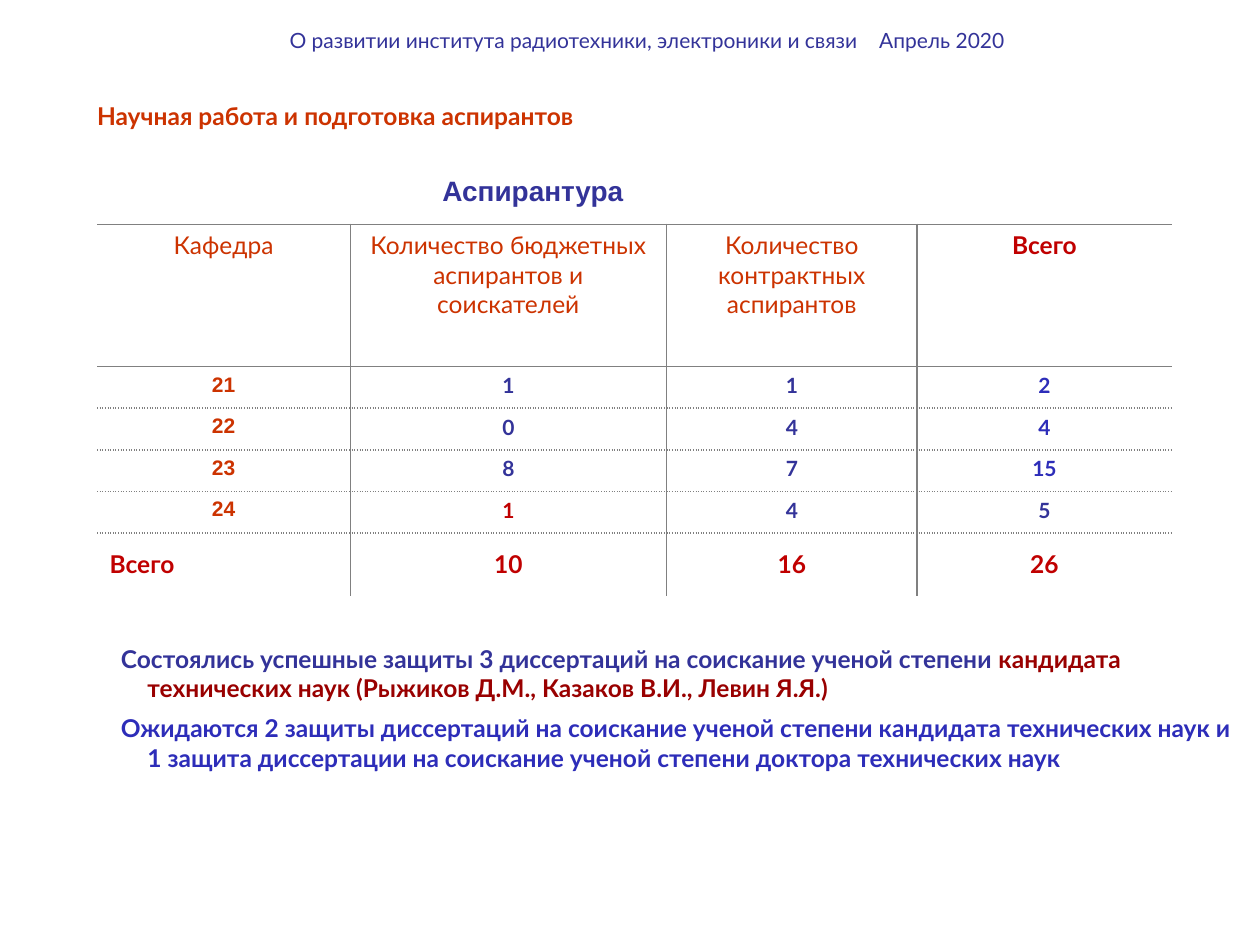
"""Build the slide on postgraduate training."""
from typing import NamedTuple

from lxml import etree
from pptx import Presentation, util as u
from pptx.dml import color
from pptx.enum import text as t
from pptx.oxml import ns

ORANGE = color.RGBColor(0xCC, 0x33, 0x00)
NAVY = color.RGBColor(0x33, 0x33, 0x99)
BLUE = color.RGBColor(0x2D, 0x2D, 0xB9)
RED = color.RGBColor(0xC0, 0x00, 0x00)
MAROON = color.RGBColor(0x99, 0x00, 0x00)
GREY = color.RGBColor(0x80, 0x80, 0x80)


class Run(NamedTuple):
    text: str
    ink: color.RGBColor
    size: int = 14
    bold: bool = True
    font: str = "Lato"


def write(par, *runs: Run) -> None:
    for item in runs:
        run = par.add_run()
        run.text = item.text
        run.font.size = u.Pt(item.size)
        run.font.bold = item.bold
        run.font.name = item.font
        run.font.color.rgb = item.ink


def place(shape, left: float, top: float, width: float, height: float, pad: float = 0.05):
    shape.left, shape.top = u.Inches(left), u.Inches(top)
    shape.width, shape.height = u.Inches(width), u.Inches(height)
    frame = shape.text_frame
    frame.word_wrap = True
    frame.auto_size = t.MSO_AUTO_SIZE.NONE
    frame.vertical_anchor = t.MSO_ANCHOR.TOP
    frame.margin_left = frame.margin_right = u.Inches(0.1)
    frame.margin_top = frame.margin_bottom = u.Inches(pad)
    return frame


def edge(cell, side: str, dash: str) -> None:
    props = cell._tc.get_or_add_tcPr()
    line = etree.SubElement(props, ns.qn(f"a:ln{side}"), w=str(u.Pt(1)))
    if not dash:
        etree.SubElement(line, ns.qn("a:noFill"))
        return
    fill = etree.SubElement(line, ns.qn("a:solidFill"))
    etree.SubElement(fill, ns.qn("a:srgbClr"), val=str(GREY))
    etree.SubElement(line, ns.qn("a:prstDash"), val=dash)


def draw_table(slide, rows: list[list[Run]], widths: list[float], heights: list[float]) -> None:
    frame = slide.shapes.add_table(len(rows), len(widths), u.Inches(0.77), u.Inches(1.78),
                                   u.Inches(sum(widths)), u.Inches(sum(heights)))
    table = frame.table
    table.first_row = table.horz_banding = False
    for col, width in zip(table.columns, widths):
        col.width = u.Inches(width)
    for row, height in zip(table.rows, heights):
        row.height = u.Inches(height)
    last, end = len(rows) - 1, len(widths) - 1
    rules = ["solid", "solid"] + ["sysDot"] * (last - 1) + [""]
    for i, row in enumerate(rows):
        for j, item in enumerate(row):
            cell = table.cell(i, j)
            edge(cell, "L", "solid" if j else "")
            edge(cell, "R", "solid" if j < end else "")
            edge(cell, "T", rules[i])
            edge(cell, "B", rules[i + 1])
            cell.fill.background()
            cell.vertical_anchor = t.MSO_ANCHOR.MIDDLE if i == last else t.MSO_ANCHOR.TOP
            par = cell.text_frame.paragraphs[0]
            par.alignment = t.PP_ALIGN.LEFT if (i, j) == (last, 0) else t.PP_ALIGN.CENTER
            write(par, item)


def draw_notes(body, notes: list[list[Run]]) -> None:
    frame = place(body, 0.86, 5.06, 9.02, 1.69)
    for i, runs in enumerate(notes):
        par = frame.add_paragraph() if i else frame.paragraphs[0]
        par.space_before, par.space_after = u.Pt(0), u.Pt(6)
        props = par._p.get_or_add_pPr()
        props.set("marL", str(u.Inches(0.21)))
        props.set("indent", str(u.Inches(-0.21)))
        etree.SubElement(props, ns.qn("a:buNone"))
        write(par, *runs)


def main() -> None:
    deck = Presentation()
    deck.slide_width, deck.slide_height = u.Inches(10), u.Inches(7.5)
    slide = deck.slides.add_slide(deck.slide_layouts[1])

    title = place(slide.shapes.title, 0.67, 0.8, 9.33, 0.24, 0).paragraphs[0]
    title.alignment = t.PP_ALIGN.LEFT
    write(title, Run("Научная работа и подготовка аспирантов", ORANGE))

    heads = ["Кафедра", "Количество бюджетных аспирантов и соискателей",
             "Количество контрактных аспирантов"]
    rows = [[Run(head, ORANGE, bold=False) for head in heads] + [Run("Всего", RED)]]
    data = [
        ("21", ("1", NAVY), ("1", NAVY), ("2", BLUE)),
        ("22", ("0", NAVY), ("4", NAVY), ("4", BLUE)),
        ("23", ("8", NAVY), ("7", NAVY), ("15", BLUE)),
        ("24", ("1", RED), ("4", NAVY), ("5", NAVY)),
    ]
    for unit, *counts in data:
        rows.append([Run(unit, ORANGE, 12, font="Arial")]
                    + [Run(count, ink, 12) for count, ink in counts])
    rows.append([Run(total, RED) for total in ("Всего", "10", "16", "26")])
    draw_table(slide, rows, [2.01, 2.51, 1.99, 2.02], [1.13] + [0.33] * 4 + [0.5])

    box = slide.shapes.add_textbox(0, 0, 0, 0)
    label = place(box, 2.43, 1.33, 3.6, 0.37).paragraphs[0]
    label.alignment = t.PP_ALIGN.CENTER
    write(label, Run("Аспирантура", NAVY, 16, font="Arial"))

    draw_notes(slide.placeholders[1], [
        [Run("Состоялись успешные защиты 3 диссертаций на соискание ученой степени ", NAVY),
         Run("кандидата технических наук (Рыжиков Д.М., Казаков В.И., Левин Я.Я.)", MAROON)],
        [Run("Ожидаются 2 защиты диссертаций на соискание ученой степени кандидата "
             "технических наук и 1 защита диссертации на соискание ученой степени "
             "доктора технических наук", BLUE)],
    ])

    box = slide.shapes.add_textbox(0, 0, 0, 0)
    header = place(box, 2.2, 0.22, 6.34, 0.2, 0).paragraphs[0]
    tabs = etree.SubElement(header._p.get_or_add_pPr(), ns.qn("a:tabLst"))
    etree.SubElement(tabs, ns.qn("a:tab"), pos=str(u.Inches(4.68)), algn="l")
    write(header, Run("О развитии института радиотехники, электроники и связи\tАпрель 2020",
                      NAVY, 12, False))

    deck.save("out.pptx")


if __name__ == "__main__":
    main()
